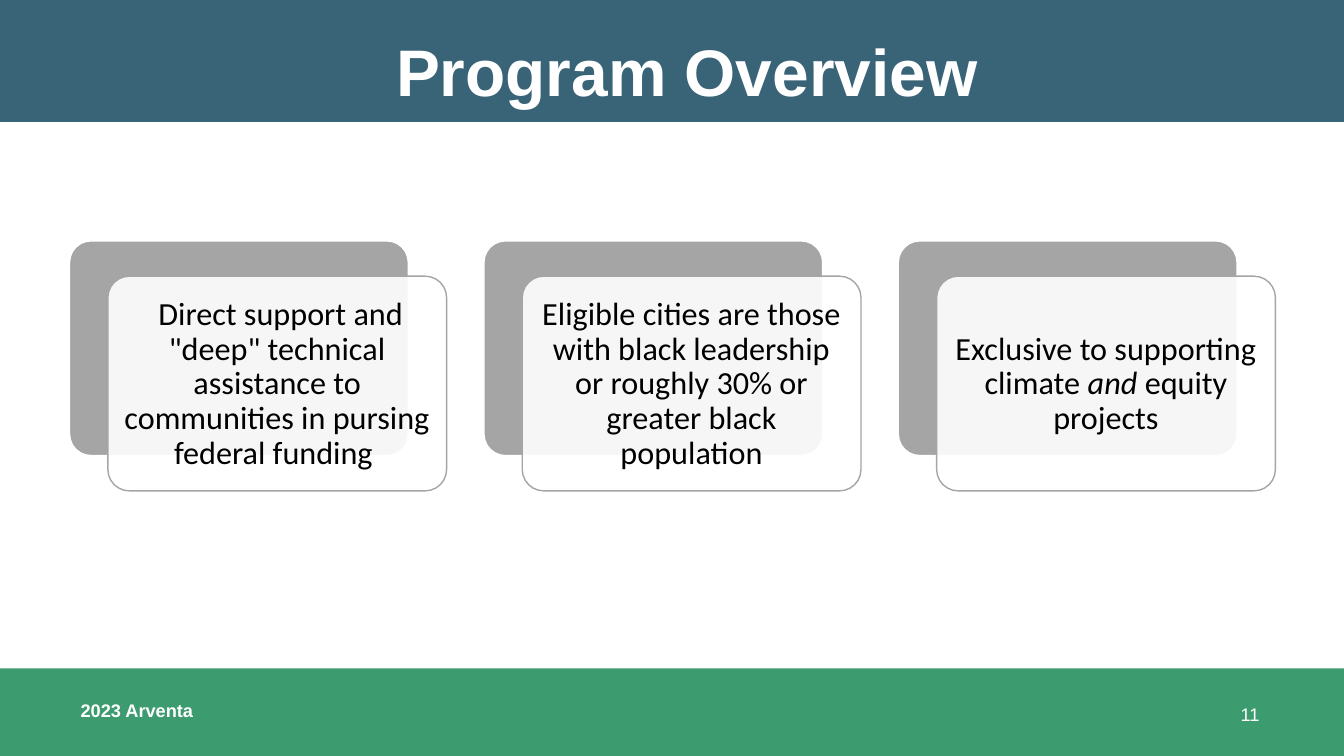
from dataclasses import dataclass

from lxml import etree
from pptx import Presentation
from pptx.dml.color import RGBColor
from pptx.enum.shapes import MSO_SHAPE as Shape
from pptx.enum.text import MSO_ANCHOR as Anchor, PP_ALIGN as Align
from pptx.oxml.ns import qn
from pptx.util import Inches, Pt


@dataclass(frozen=True)
class Theme:
    header: RGBColor = RGBColor.from_string("396377")
    footer: RGBColor = RGBColor.from_string("3C9C70")
    gray: RGBColor = RGBColor.from_string("A5A5A5")
    white: RGBColor = RGBColor.from_string("FFFFFF")
    black: RGBColor = RGBColor.from_string("000000")
    heading_font: str = "Arial"
    body_font: str = "Calibri"
    title_size: int = 47
    card_size: int = 23
    footer_size: int = 13


theme = Theme()

# Each card is a list of (text, italic) runs
CARDS = [
    [(' Direct support and "deep" technical assistance to '
      'communities in pursing federal funding ', False)],
    [("Eligible cities are those with black leadership or roughly "
      "30% or greater black population", False)],
    [("Exclusive to supporting climate ", False), ("and ", True),
     ("equity projects", False)],
]
CARD_LEFT, CARD_TOP, CARD_STEP = 0.69, 2.39, 4.11
CARD_WIDTH, CARD_HEIGHT = 3.36, 2.13

presentation = Presentation()
presentation.slide_width = Inches(13.33)
presentation.slide_height = Inches(7.5)
slide = presentation.slides.add_slide(presentation.slide_layouts[6])


def add_panel(kind, box, fill, line=None):
    shape = slide.shapes.add_shape(kind, *map(Inches, box))
    shape.shadow.inherit = False
    shape.fill.solid()
    shape.fill.fore_color.rgb = fill
    if line is None:
        shape.line.fill.background()
    else:
        shape.line.color.rgb = line
        shape.line.width = Pt(1)
    if kind == Shape.ROUNDED_RECTANGLE:
        shape.adjustments[0] = 0.1
    return shape


def add_text(box, runs, font, size, color, insets, align=Align.LEFT,
             anchor=Anchor.TOP, bold=False, spacing=1.0):
    """Add a one-paragraph text box; insets run left, top, right, bottom."""
    frame = slide.shapes.add_textbox(*map(Inches, box)).text_frame
    frame.word_wrap = True
    frame.vertical_anchor = anchor
    (frame.margin_left, frame.margin_top,
     frame.margin_right, frame.margin_bottom) = map(Inches, insets)
    paragraph = frame.paragraphs[0]
    paragraph.alignment = align
    paragraph.line_spacing = spacing
    paragraph.font.name = font
    paragraph.font.size = Pt(size)
    paragraph.font.bold = bold
    paragraph.font.color.rgb = color
    for text, italic in runs:
        run = paragraph.add_run()
        run.text = text
        if italic:
            run.font.italic = True


# Header and footer bands
add_panel(Shape.RECTANGLE, (0, 6.63, 13.33, 0.87), theme.footer)
add_panel(Shape.RECTANGLE, (0, 0, 13.33, 1.21), theme.header)
add_text((11.04, 7.02, 1.45, 0.49), [("11", False)], theme.heading_font,
         theme.footer_size, theme.white, (0, 0, 0, 0.3), Align.RIGHT)
add_text((0, 6.98, 4.06, 0.52), [("2023 Arventa", False)], theme.heading_font,
         theme.footer_size, theme.white, (0.8, 0, 0.8, 0.3), bold=True)

# Cards: a gray back panel, a translucent front panel and its text
for index, runs in enumerate(CARDS):
    left = CARD_LEFT + index * CARD_STEP
    add_panel(Shape.ROUNDED_RECTANGLE,
              (left, CARD_TOP, CARD_WIDTH, CARD_HEIGHT),
              theme.gray, theme.white)
    front = add_panel(Shape.ROUNDED_RECTANGLE,
                      (left + 0.38, CARD_TOP + 0.35, CARD_WIDTH, CARD_HEIGHT),
                      theme.white, theme.gray)
    fill_color = front.fill._xPr.find(qn("a:solidFill"))[0]
    etree.SubElement(fill_color, qn("a:alpha"), val="90000")
    add_text((left + 0.44, CARD_TOP + 0.42, 3.24, 2.01), runs,
             theme.body_font, theme.card_size, theme.black, (0.1,) * 4,
             Align.CENTER, Anchor.MIDDLE, spacing=0.9)

add_text((1.5, -0.11, 10.63, 1.72), [("Program Overview", False)],
         theme.heading_font, theme.title_size, theme.white,
         (0.1, 0.05, 0.1, 0.05), Align.CENTER, Anchor.MIDDLE,
         bold=True, spacing=0.9)

presentation.save("out.pptx")
